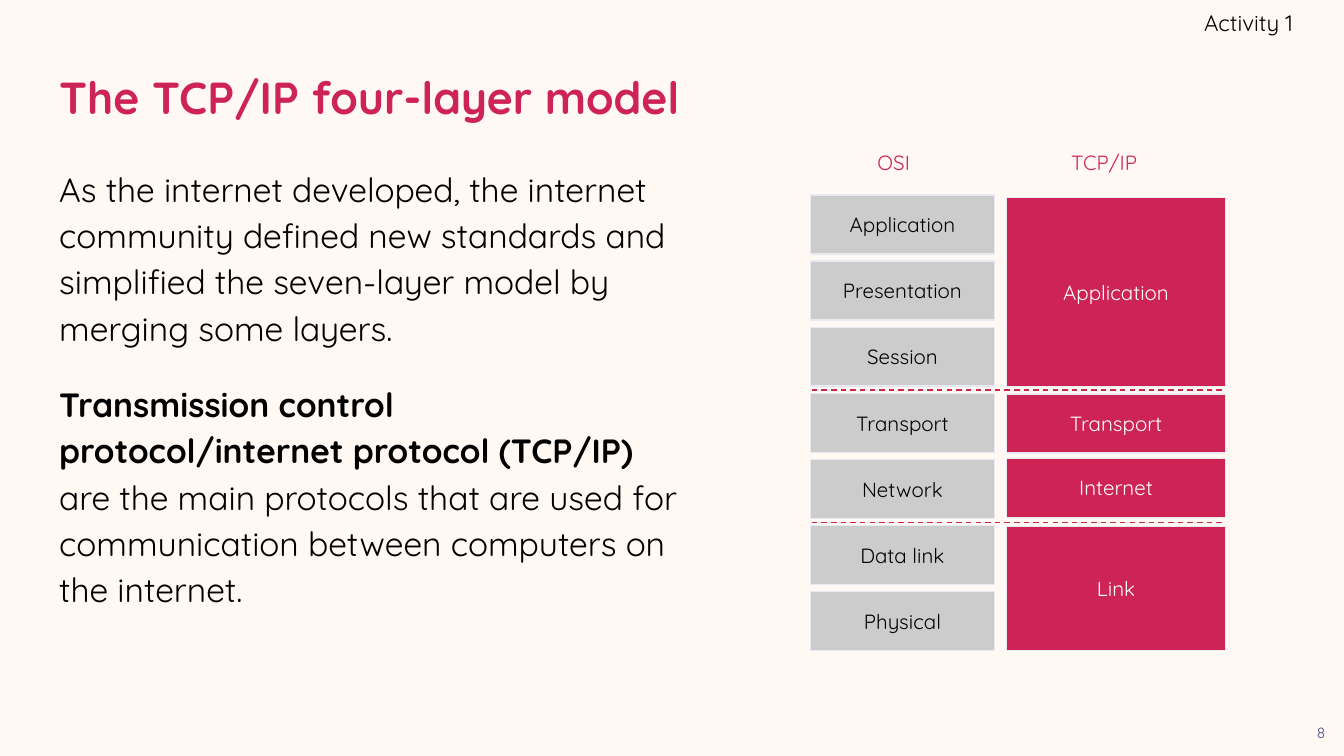
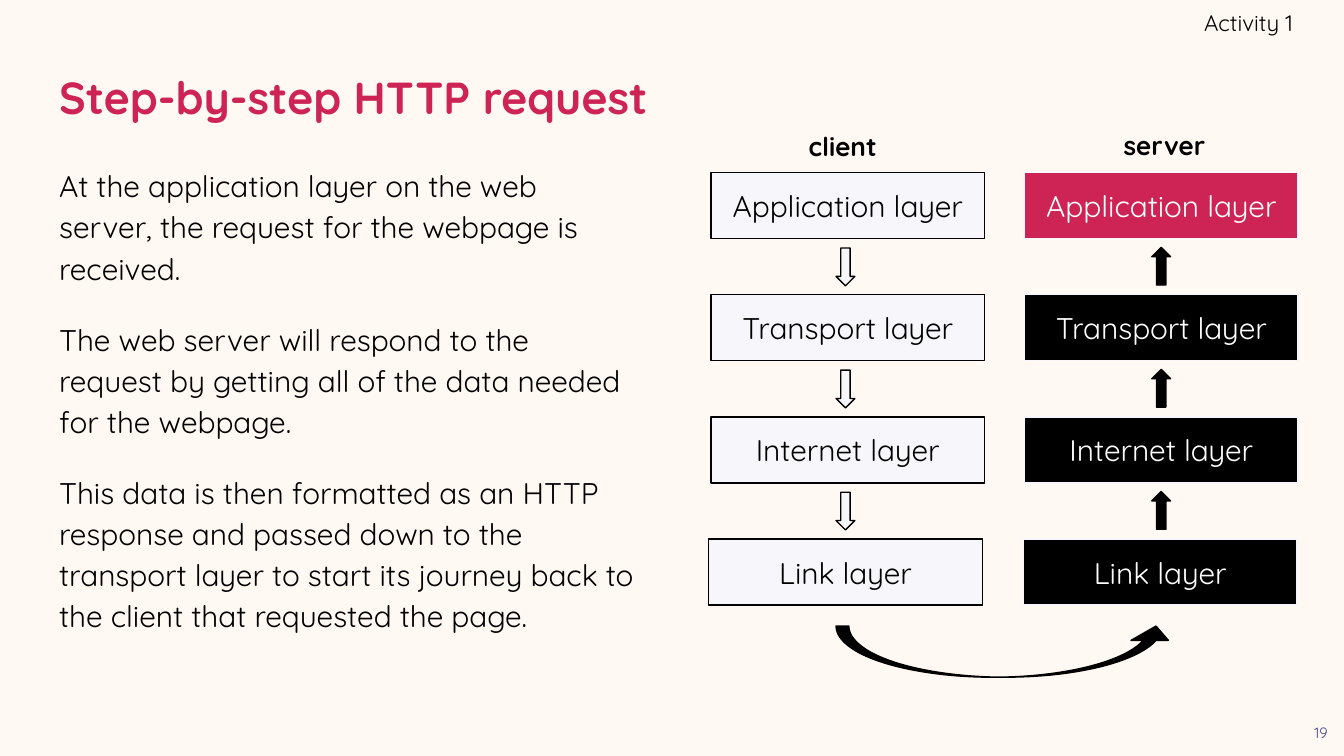
from dataclasses import dataclass

from lxml.etree import SubElement
from pptx import Presentation
from pptx.dml.color import RGBColor
from pptx.enum.dml import MSO_LINE
from pptx.enum.shapes import MSO_CONNECTOR, MSO_SHAPE
from pptx.enum.text import MSO_ANCHOR, MSO_AUTO_SIZE, PP_ALIGN
from pptx.oxml.ns import qn
from pptx.presentation import Presentation as Deck
from pptx.shapes.base import BaseShape
from pptx.slide import Slide
from pptx.text.text import TextFrame
from pptx.util import Pt

FONT = "Quicksand"
CREAM, CRIMSON, BLACK, WHITE = "FFF8F3", "CD2355", "000000", "FFFFFF"
GREY, LAVENDER, PALE, INDIGO = "CCCCCC", "E9E9F3", "F7F6FB", "494985"
INSET = 7.2
PARAGRAPH_GAP = 16


@dataclass(frozen=True)
class Area:
    left: float
    top: float
    width: float
    height: float


@dataclass(frozen=True)
class Run:
    text: str
    bold: bool = False


@dataclass(frozen=True)
class Style:
    fill: str
    line: str
    text: str = BLACK


@dataclass(frozen=True)
class Layer:
    name: str
    top: float
    height: float


@dataclass(frozen=True)
class Stack:
    heading: str
    heading_area: Area
    left: float
    arrow_left: float
    arrow_top: float
    rotation: int
    link_shift: float
    top_style: Style
    style: Style
    arrow_style: Style


OSI_STYLE = Style(GREY, LAVENDER)
TCP_STYLE = Style(CRIMSON, LAVENDER, WHITE)
CLIENT_STYLE = Style(PALE, BLACK)
SERVER_STYLE = Style(BLACK, PALE, WHITE)
REQUEST_STYLE = Style(CRIMSON, PALE, WHITE)
SOLID_ARROW = Style(BLACK, BLACK)

TITLE_AREA = Area(24.5, 24.5, 671, 54.7)
ACTIVITY_AREA = Area(538.6, 0, 154.1, 24.5)
NUMBER_AREA = Area(695.5, 380.2, 24.5, 24.5)

OSI_LAYERS = ["Application", "Presentation", "Session", "Transport",
              "Network", "Data link", "Physical"]
TCP_LAYERS = [
    Layer("Application", 105.8, 101.3),
    Layer("Transport", 211, 31.7),
    Layer("Internet", 245.5, 31.7),
    Layer("Link", 282.2, 66.3),
]
HTTP_LAYERS = ["Application layer", "Transport layer", "Internet layer", "Link layer"]
STACKS = [
    Stack("client", Area(388.5, 62.6, 126, 31.7), 380.9, 447.9, 132.9, 0, 1.2,
          CLIENT_STYLE, CLIENT_STYLE, CLIENT_STYLE),
    Stack("server", Area(560.8, 62.2, 126, 31.7), 548.9, 617, 132.5, 180, 0.6,
          REQUEST_STYLE, SERVER_STYLE, SOLID_ARROW),
]


def color(value: str) -> RGBColor:
    return RGBColor.from_string(value)


def place(shape: BaseShape, area: Area) -> None:
    shape.left, shape.top = Pt(area.left), Pt(area.top)
    shape.width, shape.height = Pt(area.width), Pt(area.height)


def write(frame: TextFrame, paragraphs: list[list[Run]], *, size: float,
          fill: str = BLACK, align: PP_ALIGN = PP_ALIGN.LEFT,
          anchor: MSO_ANCHOR = MSO_ANCHOR.TOP, spacing: float = 1.0,
          gap: float = 0, after: float = 0, right_inset: float = INSET,
          fit: MSO_AUTO_SIZE = MSO_AUTO_SIZE.NONE) -> None:
    frame.word_wrap = True
    frame.auto_size = fit
    frame.vertical_anchor = anchor
    frame.margin_left = frame.margin_top = frame.margin_bottom = Pt(INSET)
    frame.margin_right = Pt(right_inset)
    for index, runs in enumerate(paragraphs):
        paragraph = frame.add_paragraph() if index else frame.paragraphs[0]
        paragraph.alignment = align
        paragraph.line_spacing = spacing
        paragraph.space_before = Pt(gap if index else 0)
        paragraph.space_after = Pt(after)
        for part in runs:
            run = paragraph.add_run()
            run.text = part.text
            run.font.name = FONT
            run.font.size = Pt(size)
            run.font.bold = part.bold
            run.font.color.rgb = color(fill)


def add_label(slide: Slide, area: Area, text: str, *, bold: bool = False,
              **text_format) -> None:
    label = slide.shapes.add_textbox(Pt(0), Pt(0), Pt(0), Pt(0))
    place(label, area)
    write(label.text_frame, [[Run(text, bold)]], **text_format)


def add_figure(slide: Slide, kind: MSO_SHAPE, area: Area, style: Style) -> BaseShape:
    figure = slide.shapes.add_shape(kind, Pt(0), Pt(0), Pt(0), Pt(0))
    place(figure, area)
    figure.shadow.inherit = False
    figure.fill.solid()
    figure.fill.fore_color.rgb = color(style.fill)
    figure.line.color.rgb = color(style.line)
    figure.line.width = Pt(0.75)
    return figure


def add_layer(slide: Slide, area: Area, name: str, style: Style, size: float) -> None:
    layer = add_figure(slide, MSO_SHAPE.RECTANGLE, area, style)
    write(layer.text_frame, [[Run(name)]], size=size, fill=style.text,
          align=PP_ALIGN.CENTER, anchor=MSO_ANCHOR.MIDDLE)


def add_divider(slide: Slide, left: float, right: float, y: float) -> None:
    divider = slide.shapes.add_connector(
        MSO_CONNECTOR.STRAIGHT, Pt(left), Pt(y), Pt(right), Pt(y))
    divider.line.color.rgb = color(CRIMSON)
    divider.line.width = Pt(0.75)
    divider.line.dash_style = MSO_LINE.DASH
    SubElement(divider._element.spPr, qn("a:effectLst"))


def add_lesson_slide(deck: Deck, title: str, number: int, body_area: Area,
                     body: list[list[Run]], body_size: float) -> Slide:
    slide = deck.slides.add_slide(deck.slide_layouts[1])
    heading, explanation = slide.placeholders
    place(heading, TITLE_AREA)
    write(heading.text_frame, [[Run(title, True)]], size=24, fill=CRIMSON,
          anchor=MSO_ANCHOR.MIDDLE)
    place(explanation, body_area)
    write(explanation.text_frame, body, size=body_size, spacing=1.15,
          gap=PARAGRAPH_GAP)
    for paragraph in explanation.text_frame.paragraphs:
        properties = paragraph._p.get_or_add_pPr()
        properties.set("marL", "0")
        properties.set("indent", "0")
        SubElement(properties, qn("a:buNone"))
    add_label(slide, ACTIVITY_AREA, "Activity 1", size=12, align=PP_ALIGN.RIGHT,
              anchor=MSO_ANCHOR.MIDDLE, right_inset=0)
    add_label(slide, NUMBER_AREA, str(number), size=8, fill=INDIGO,
              align=PP_ALIGN.CENTER)
    return slide


def add_model_slide(deck: Deck) -> None:
    slide = add_lesson_slide(
        deck, "The TCP/IP four-layer model", 8, Area(24.5, 79.9, 348.5, 288), [
            [Run("As the internet developed, the internet community defined new "
                 "standards and simplified the seven-layer model by merging some "
                 "layers.")],
            [Run("Transmission control protocol/internet protocol (TCP/IP) ", True),
             Run("are the main protocols that are used for communication between "
                 "computers on the internet.")],
        ], 18)
    for index, name in enumerate(OSI_LAYERS):
        add_layer(slide, Area(434.2, 104.5 + 35.4 * index, 98.6, 31.6), name,
                  OSI_STYLE, 11)
    for layer in TCP_LAYERS:
        add_layer(slide, Area(539.3, layer.top, 117.2, layer.height), layer.name,
                  TCP_STYLE, 11)
    for model, left, width in (("OSI", 463, 43.2), ("TCP/IP", 566.8, 61.9)):
        add_label(slide, Area(left, 71.3, width, 28.1), model, size=11, fill=CRIMSON,
                  spacing=1.15, after=PARAGRAPH_GAP,
                  fit=MSO_AUTO_SIZE.SHAPE_TO_FIT_TEXT)
    for y in (208.9, 279.9):
        add_divider(slide, 434.9, 655.9, y)


def add_stack(slide: Slide, stack: Stack) -> None:
    last = len(HTTP_LAYERS) - 1
    for index, name in enumerate(HTTP_LAYERS):
        left = stack.left - (stack.link_shift if index == last else 0)
        style = stack.style if index else stack.top_style
        add_layer(slide, Area(left, 92.3 + 65.5 * index, 146.6, 35.4), name, style, 16)
        if index < last:
            arrow = add_figure(
                slide, MSO_SHAPE.DOWN_ARROW,
                Area(stack.arrow_left, stack.arrow_top + 65.4 * index, 10.1, 20.2),
                stack.arrow_style)
            arrow.rotation = stack.rotation
    add_label(slide, stack.heading_area, stack.heading, bold=True, size=14,
              align=PP_ALIGN.CENTER, fit=MSO_AUTO_SIZE.SHAPE_TO_FIT_TEXT)


def add_request_slide(deck: Deck) -> None:
    slide = add_lesson_slide(
        deck, "Step-by-step HTTP request", 19, Area(24.5, 79.9, 322.6, 312.5), [
            [Run("At the application layer on the web server, the request for the "
                 "webpage is received.")],
            [Run("The web server will respond to the request by getting all of the "
                 "data needed for the webpage.")],
            [Run("This data is then formatted as an HTTP response and passed down to "
                 "the transport layer to start its journey back to the client that "
                 "requested the page.")],
        ], 16)
    for stack in STACKS:
        add_stack(slide, stack)
    crossing = add_figure(slide, MSO_SHAPE.CURVED_UP_ARROW,
                          Area(447.9, 335.4, 181.4, 27.4), SOLID_ARROW)
    for index, value in enumerate((0.25, 0.73, 0.28)):
        crossing.adjustments[index] = value


def main() -> None:
    deck = Presentation()
    deck.slide_width, deck.slide_height = Pt(720), Pt(405)
    background = deck.slide_master.background.fill
    background.solid()
    background.fore_color.rgb = color(CREAM)
    add_model_slide(deck)
    add_request_slide(deck)
    deck.save("out.pptx")


if __name__ == "__main__":
    main()
